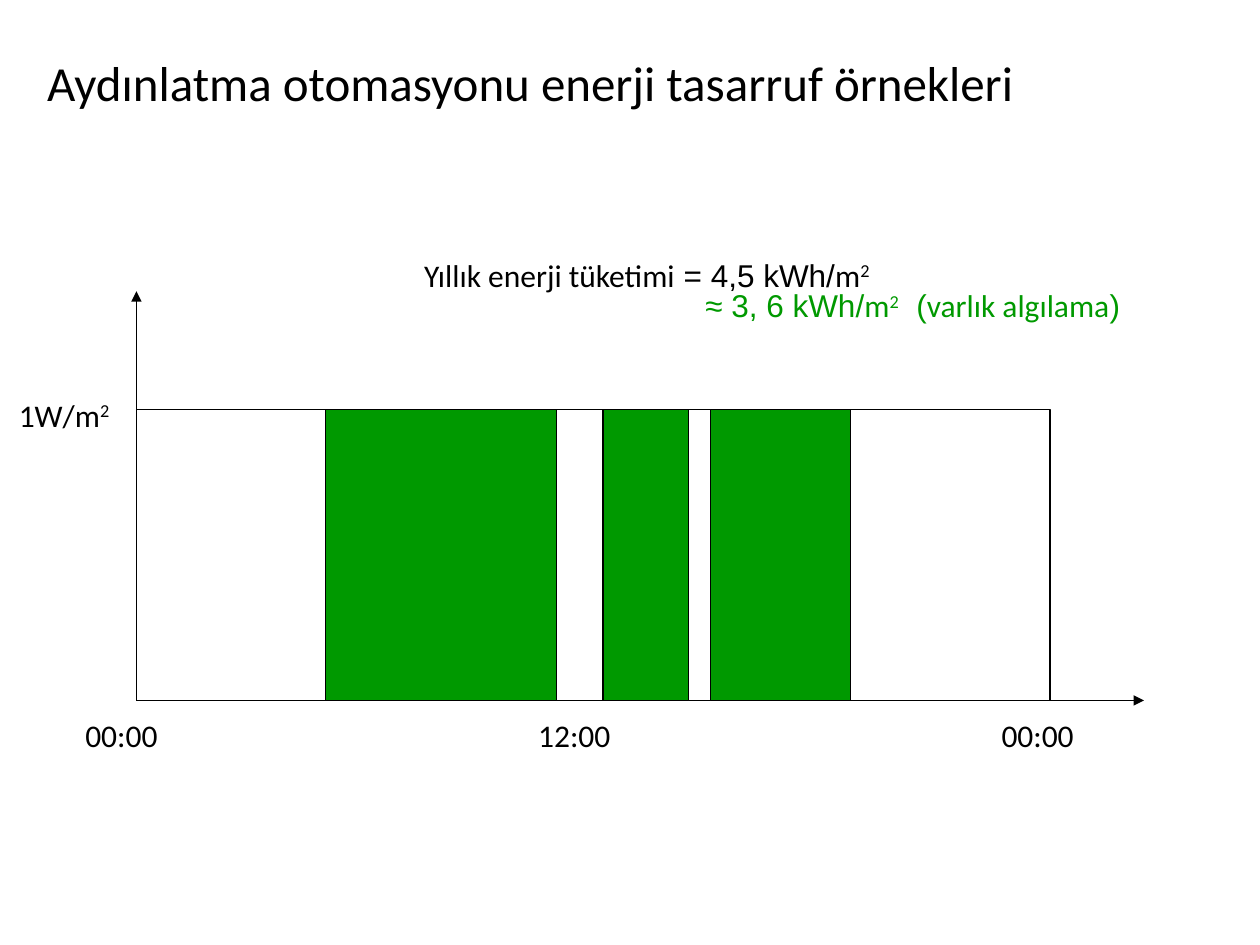
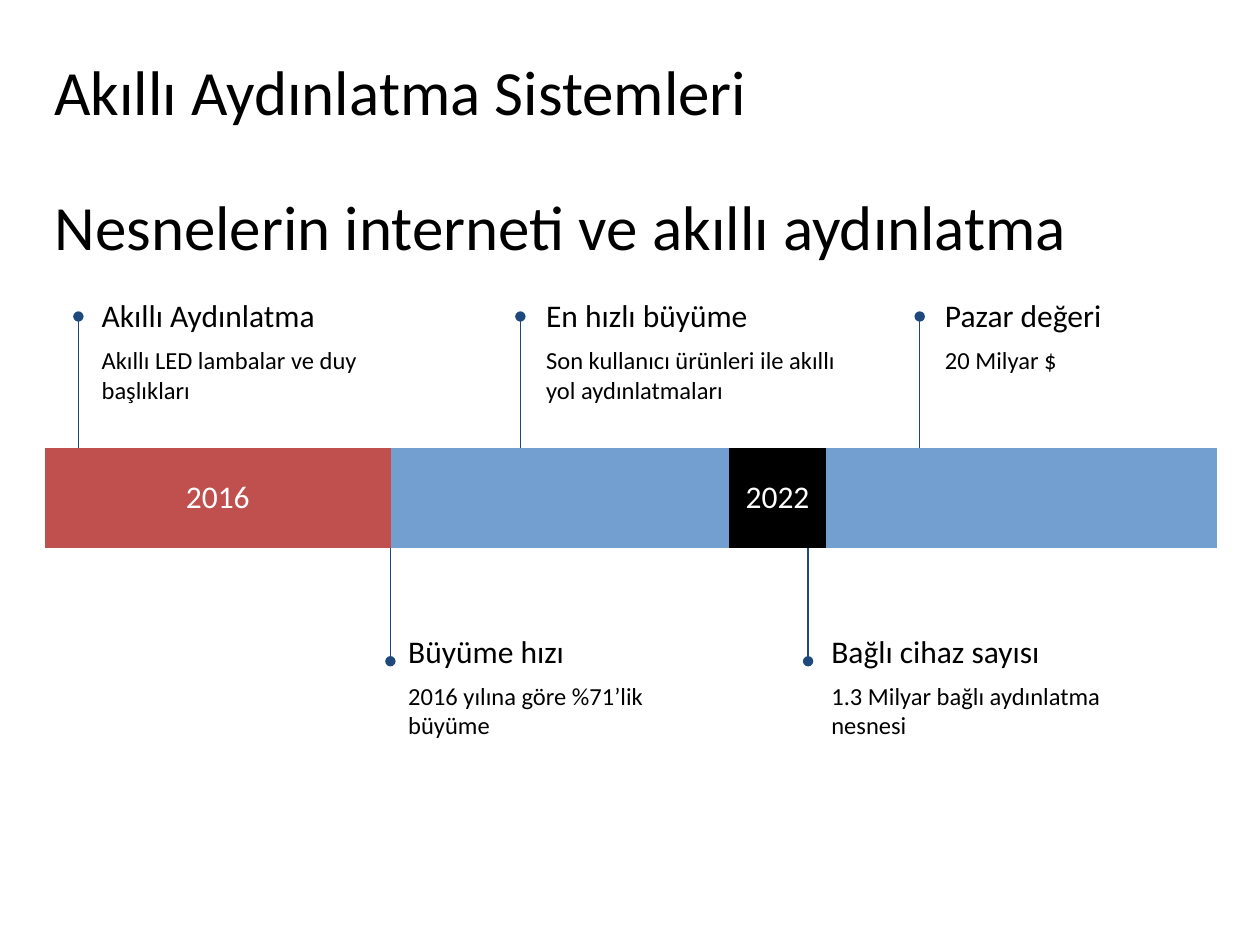
"""Build two slides on lighting automation and smart lighting growth."""

from dataclasses import dataclass

from lxml.etree import SubElement
from pptx import Presentation
from pptx.dml.color import RGBColor
from pptx.enum.shapes import MSO_CONNECTOR as Connector
from pptx.enum.shapes import MSO_SHAPE as Preset
from pptx.enum.text import MSO_ANCHOR as Anchor
from pptx.enum.text import MSO_AUTO_SIZE as AutoSize
from pptx.enum.text import PP_ALIGN as Align
from pptx.oxml.ns import qn
from pptx.slide import Slide
from pptx.text.text import TextFrame
from pptx.util import Cm, Pt

BLACK = RGBColor(0x00, 0x00, 0x00)
WHITE = RGBColor(0xFF, 0xFF, 0xFF)
GREEN = RGBColor(0x00, 0x99, 0x00)
RED = RGBColor(0xC0, 0x50, 0x4D)
NAVY = RGBColor(0x1F, 0x49, 0x7D)

SANS = "Calibri"
SYMBOL = "Arial"
LINE_WIDTH = Pt(0.75)
SIDE_INSET = Cm(0.25)
TITLE_ONLY = 5
PLAIN_TABLE = "{2D5ABB26-0587-4C30-8999-92F81FD0307C}"

AXIS_LEFT, AXIS_TOP, AXIS_RIGHT, AXIS_BASE = 2.75, 5.87, 23.06, 14.12
LOAD_TOP = 8.26
BAND_LEFT, BAND_TOP, BAND_HEIGHT = 0.9, 9.04, 2.0
BAND_BOTTOM = BAND_TOP + BAND_HEIGHT
BAND_COLUMNS = [1.97] * 3 + [1.07, 2.87] + [1.97] * 7


@dataclass(frozen=True)
class Box:
    """Position and size in centimetres."""

    left: float
    top: float
    width: float
    height: float

    def lengths(self) -> tuple[Cm, Cm, Cm, Cm]:
        """Return the four sides as slide lengths."""
        return Cm(self.left), Cm(self.top), Cm(self.width), Cm(self.height)


@dataclass(frozen=True)
class Piece:
    """A stretch of text in one font."""

    text: str
    font: str = SANS
    raised: bool = False


@dataclass(frozen=True)
class Style:
    """Look of a block of text."""

    size: int = 18
    color: RGBColor = BLACK
    anchor: Anchor = Anchor.TOP
    align: Align = Align.LEFT
    top_inset: float = 0.13


@dataclass(frozen=True)
class Label:
    """Text placed on the consumption diagram."""

    box: Box
    pieces: tuple[Piece, ...]
    color: RGBColor = BLACK


@dataclass(frozen=True)
class LoadBlock:
    """A period on the consumption diagram."""

    left: float
    width: float
    fill: RGBColor | None = None


@dataclass(frozen=True)
class Period:
    """A run of columns in the timeline band."""

    columns: int
    fill: RGBColor
    year: str


@dataclass(frozen=True)
class Callout:
    """A heading and detail tied to the timeline."""

    heading: str
    detail: str
    marker: float
    left: float
    above: bool


SMALL_TITLE = Style(size=28)
LARGE_TITLE = Style(size=36)
LOWER_TITLE = Style(size=36, top_inset=0.25)
HEADING = Style(anchor=Anchor.MIDDLE, top_inset=0.25)
DETAIL = Style(size=14, top_inset=0.25)
YEAR = Style(color=WHITE, anchor=Anchor.MIDDLE, align=Align.CENTER, top_inset=0.25)

SQUARED = Piece("2", raised=True)
LABELS = (
    Label(Box(1.47, 14.3, 3.78, 0.76), (Piece("00:00"),)),
    Label(Box(10.6, 14.3, 2.79, 0.76), (Piece("12:00"),)),
    Label(Box(19.94, 14.3, 3.78, 0.76), (Piece("00:00"),)),
    Label(Box(0.13, 7.85, 2.64, 0.76), (Piece("1W/m"), SQUARED)),
    Label(
        Box(8.3, 5.03, 12.57, 0.76),
        (Piece("Yıllık enerji tüketimi"), Piece(" = 4,5 kWh/", SYMBOL), Piece("m"), SQUARED),
    ),
    Label(
        Box(13.97, 5.64, 10.31, 0.76),
        (
            Piece("≈ 3, 6 kWh/", SYMBOL),
            Piece("m"),
            SQUARED,
            Piece("  (", SYMBOL),
            Piece("varlık algılama"),
            Piece(")", SYMBOL),
        ),
        GREEN,
    ),
)
LOAD_BLOCKS = (
    LoadBlock(AXIS_LEFT, 18.42),
    LoadBlock(6.56, 10.58, GREEN),
    LoadBlock(11.22, 0.94, WHITE),
    LoadBlock(13.88, 0.44, WHITE),
)
PERIODS = (Period(4, RED, "2016"), Period(8, BLACK, "2022"))
CALLOUTS = (
    Callout("Akıllı Aydınlatma", "Akıllı LED lambalar ve duy başlıkları", 1.58, 1.8, True),
    Callout("Büyüme hızı", "2016 yılına göre %71’lik büyüme", 7.87, 7.98, False),
    Callout(
        "En hızlı büyüme",
        "Son kullanıcı ürünleri ile akıllı yol aydınlatmaları",
        10.49,
        10.76,
        True,
    ),
    Callout("Bağlı cihaz sayısı", "1.3 Milyar bağlı aydınlatma nesnesi", 16.29, 16.51, False),
    Callout("Pazar değeri", "20 Milyar $", 18.54, 18.8, True),
)


def write_pieces(text_frame: TextFrame, pieces: tuple[Piece, ...], style: Style) -> None:
    """Fill the first paragraph with formatted runs."""
    paragraph = text_frame.paragraphs[0]
    paragraph.alignment = style.align
    for piece in pieces:
        run = paragraph.add_run()
        run.text = piece.text
        run.font.name = piece.font
        run.font.size = Pt(style.size)
        run.font.color.rgb = style.color
        if piece.raised:
            run._r.get_or_add_rPr().set("baseline", "30000")


def fill_frame(text_frame: TextFrame, pieces: tuple[Piece, ...], style: Style) -> None:
    """Set the frame's margins and anchor and write its text."""
    text_frame.word_wrap = True
    text_frame.auto_size = AutoSize.NONE
    text_frame.vertical_anchor = style.anchor
    text_frame.margin_left = text_frame.margin_right = SIDE_INSET
    text_frame.margin_top = text_frame.margin_bottom = Cm(style.top_inset)
    write_pieces(text_frame, pieces, style)


def add_text(slide: Slide, box: Box, pieces: tuple[Piece, ...], style: Style) -> None:
    """Add a text box."""
    shape = slide.shapes.add_textbox(*box.lengths())
    fill_frame(shape.text_frame, pieces, style)


def add_titled_slide(presentation: Presentation, title: str, box: Box, style: Style) -> Slide:
    """Add a slide and place its title."""
    slide = presentation.slides.add_slide(presentation.slide_layouts[TITLE_ONLY])
    shape = slide.shapes.title
    shape.left, shape.top, shape.width, shape.height = box.lengths()
    fill_frame(shape.text_frame, (Piece(title),), style)
    return slide


def add_line(
    slide: Slide,
    start: tuple[float, float],
    end: tuple[float, float],
    color: RGBColor,
    tip: str,
) -> None:
    """Draw a straight line with a tip at its end."""
    connector = slide.shapes.add_connector(
        Connector.STRAIGHT, *(Cm(value) for value in start + end)
    )
    connector.line.color.rgb = color
    connector.line.width = LINE_WIDTH
    SubElement(connector.line._get_or_add_ln(), qn("a:tailEnd"), type=tip)
    SubElement(connector._element.spPr, qn("a:effectLst"))


def add_load_block(slide: Slide, block: LoadBlock) -> None:
    """Draw one outlined period standing on the time axis."""
    box = Box(block.left, LOAD_TOP, block.width, AXIS_BASE - LOAD_TOP)
    shape = slide.shapes.add_shape(Preset.RECTANGLE, *box.lengths())
    shape.shadow.inherit = False
    shape.line.color.rgb = BLACK
    shape.line.width = LINE_WIDTH
    if block.fill is None:
        shape.fill.background()
    else:
        shape.fill.solid()
        shape.fill.fore_color.rgb = block.fill


def add_band(slide: Slide) -> None:
    """Draw the timeline band as a one-row table."""
    box = Box(BAND_LEFT, BAND_TOP, sum(BAND_COLUMNS), BAND_HEIGHT)
    table = slide.shapes.add_table(1, len(BAND_COLUMNS), *box.lengths()).table
    table.first_row = table.horz_banding = False
    table._tbl.tblPr.find(qn("a:tableStyleId")).text = PLAIN_TABLE
    for column, width in zip(table.columns, BAND_COLUMNS):
        column.width = Cm(width)
    first = 0
    for period in PERIODS:
        cell = table.cell(0, first)
        first += period.columns
        cell.merge(table.cell(0, first - 1))
        cell.fill.solid()
        cell.fill.fore_color.rgb = period.fill
        cell.vertical_anchor = YEAR.anchor
        cell.margin_left = cell.margin_right = SIDE_INSET
        cell.margin_top = cell.margin_bottom = Cm(YEAR.top_inset)
        write_pieces(cell.text_frame, (Piece(period.year),), YEAR)


def add_callout(slide: Slide, callout: Callout) -> None:
    """Draw a marker line with its heading and detail."""
    start, end, top = (BAND_TOP, 6.38, 5.81) if callout.above else (BAND_BOTTOM, 13.33, 12.57)
    add_line(slide, (callout.marker, start), (callout.marker, end), NAVY, "oval")
    add_text(slide, Box(callout.left, top, 6.5, 1.09), (Piece(callout.heading),), HEADING)
    add_text(slide, Box(callout.left, top + 0.9, 6.5, 1.6), (Piece(callout.detail),), DETAIL)


def build_savings_slide(presentation: Presentation) -> None:
    """Build the daily consumption diagram."""
    title = "Aydınlatma otomasyonu enerji tasarruf örnekleri"
    slide = add_titled_slide(presentation, title, Box(0.7, 0.93, 20.8, 2.24), SMALL_TITLE)
    origin = (AXIS_LEFT, AXIS_BASE)
    for axis_end in ((AXIS_LEFT, AXIS_TOP), (AXIS_RIGHT, AXIS_BASE)):
        add_line(slide, origin, axis_end, BLACK, "triangle")
    for block in LOAD_BLOCKS:
        add_load_block(slide, block)
    for label in LABELS:
        add_text(slide, label.box, label.pieces, Style(color=label.color))


def build_growth_slide(presentation: Presentation) -> None:
    """Build the smart lighting timeline."""
    title = "Nesnelerin interneti ve akıllı aydınlatma"
    slide = add_titled_slide(presentation, title, Box(0.85, 3.53, 23.67, 1.78), LOWER_TITLE)
    topic = (Piece("Akıllı Aydınlatma Sistemleri"),)
    add_text(slide, Box(0.85, 0.93, 19.66, 1.8), topic, LARGE_TITLE)
    add_band(slide)
    for callout in CALLOUTS:
        add_callout(slide, callout)


def main() -> None:
    """Create and save the presentation."""
    presentation = Presentation()
    presentation.slide_width, presentation.slide_height = Cm(25.4), Cm(19.05)
    build_savings_slide(presentation)
    build_growth_slide(presentation)
    presentation.save("out.pptx")


if __name__ == "__main__":
    main()
